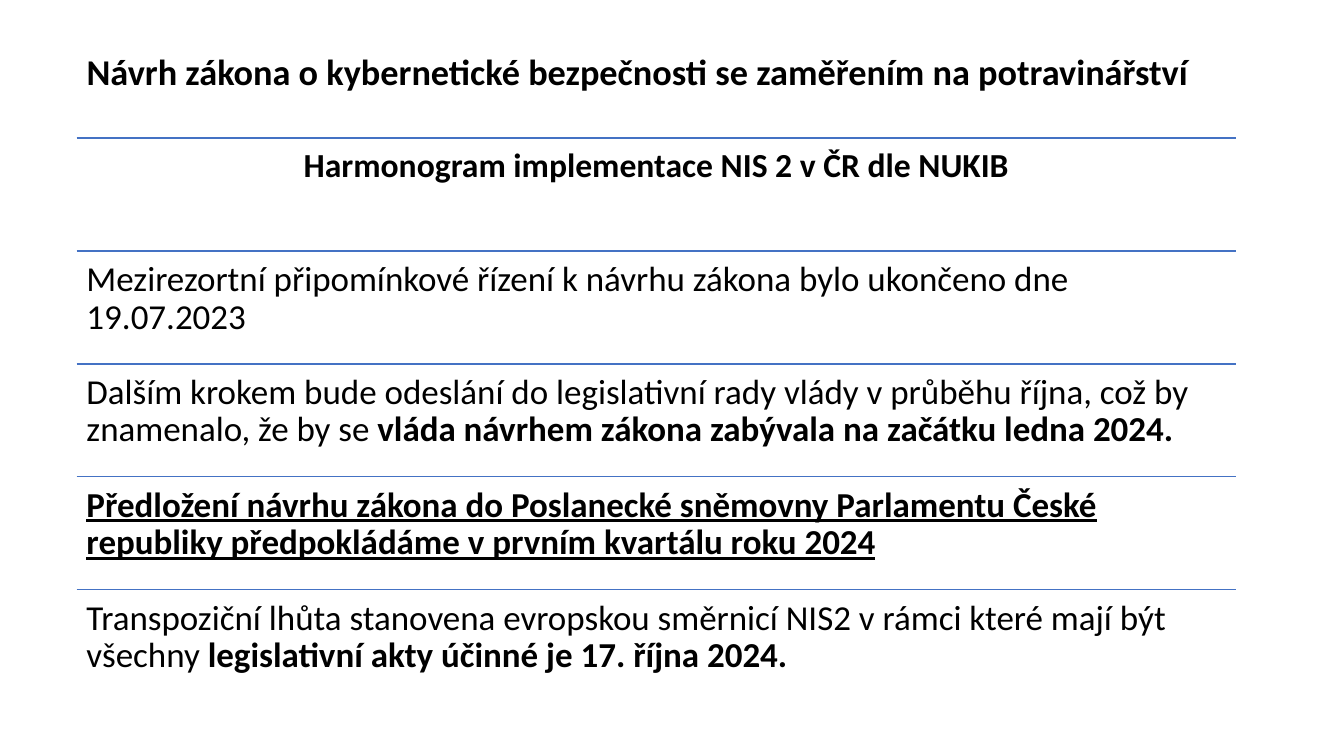
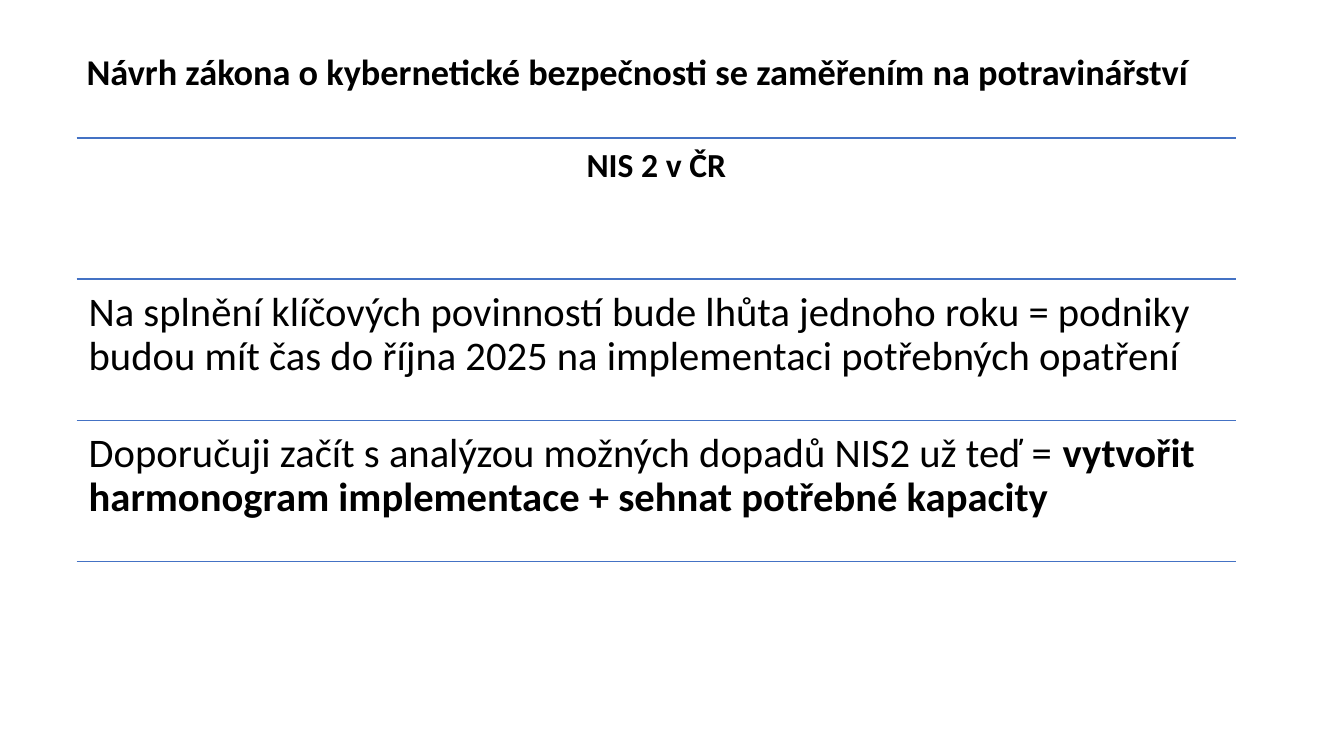
from pptx import Presentation
from pptx.dml.color import RGBColor
from pptx.enum.shapes import MSO_CONNECTOR as Conn
from pptx.enum.text import PP_ALIGN as Align
from pptx.oxml.ns import qn
from pptx.util import Inches, Pt
from lxml.etree import SubElement

BLACK = RGBColor(0x00, 0x00, 0x00)
BLUE = RGBColor(0x44, 0x72, 0xC4)
FONT = "Calibri"
LEFT, TOP, WIDTH = 0.76, 1.37, 11.5
TITLE = "Návrh zákona o kybernetické bezpečnosti se zaměřením na potravinářství"


def write(frame, runs, size, align=Align.LEFT, inset=0.1, pad=0.1,
          line=0.9, before=0, after=0):
    """Fill a frame with one paragraph of (text, style letters) runs."""
    frame.word_wrap = True
    frame.margin_left = frame.margin_right = Inches(inset)
    frame.margin_top = frame.margin_bottom = Inches(pad)
    para = frame.paragraphs[0]
    para.alignment = align
    para.line_spacing = line
    para.space_before, para.space_after = Pt(before), Pt(after)
    for text, style in runs:
        run = para.add_run()
        run.text = text
        font = run.font
        font.name, font.size = FONT, Pt(size)
        font.color.rgb = BLACK
        font.bold = "b" in style
        font.underline = "u" in style


class Deck:
    def __init__(self):
        self.prs = Presentation()
        self.prs.slide_width = Inches(13.33)
        self.prs.slide_height = Inches(7.5)
        self.slide = None

    def start(self):
        self.slide = self.prs.slides.add_slide(self.prs.slide_layouts[6])

    def text(self, left, top, width, height, runs, size, **form):
        box = self.slide.shapes.add_textbox(
            Inches(left), Inches(top), Inches(width), Inches(height))
        write(box.text_frame, runs, size, **form)

    def title(self):
        self.text(LEFT, 0.52, 11.81, 0.46, [(TITLE, "b")], 25.9,
                  pad=0.05, line=0.8, before=10)

    def rule(self, top):
        line = self.slide.shapes.add_connector(
            Conn.STRAIGHT, Inches(LEFT), Inches(top),
            Inches(LEFT + WIDTH), Inches(top))
        line.line.color.rgb = BLUE
        line.line.width = Pt(1)
        SubElement(line._element.spPr, qn("a:effectLst"))

    def rows(self, head, items, step, size, inset, closed=False):
        """Stack a centred heading and items, each under its own rule."""
        for i, runs in enumerate([[(head, "b")], *items]):
            top = TOP + i * step
            self.rule(top)
            if i == 0:
                form = dict(size=24, align=Align.CENTER)
            else:
                form = dict(size=size, inset=inset, pad=inset)
            self.text(LEFT, top, WIDTH, step, runs, **form)
        if closed:
            self.rule(top + step)


def main():
    deck = Deck()

    deck.start()
    deck.rows("Harmonogram implementace NIS 2 v ČR dle NUKIB", [
        [("Mezirezortní připomínkové řízení k návrhu zákona bylo ukončeno "
          "dne 19.07.2023", "")],
        [("Dalším krokem bude odeslání do legislativní rady vlády v průběhu "
          "října, což by znamenalo, že by se ", ""),
         ("vláda návrhem zákona zabývala na začátku ledna 2024.", "b")],
        [("Předložení návrhu zákona do Poslanecké sněmovny Parlamentu České "
          "republiky předpokládáme v prvním kvartálu roku 2024", "bu")],
        [("Transpoziční lhůta stanovena evropskou směrnicí NIS2 v rámci "
          "které mají být všechny ", ""),
         ("legislativní akty účinné je 17. října 2024.", "b")],
    ], step=1.12, size=25, inset=0.1)
    deck.title()

    deck.start()
    deck.rows("NIS 2 v ČR", [
        [("Na splnění klíčových povinností bude lhůta jednoho roku = podniky "
          "budou mít čas do října 2025 na implementaci potřebných opatření",
          "")],
        [("Doporučuji začít s analýzou možných dopadů NIS2 už teď = ", ""),
         ("vytvořit harmonogram implementace + sehnat potřebné kapacity",
          "b")],
    ], step=1.4, size=29, inset=0.12, closed=True)
    deck.title()

    deck.prs.save("out.pptx")


if __name__ == "__main__":
    main()
